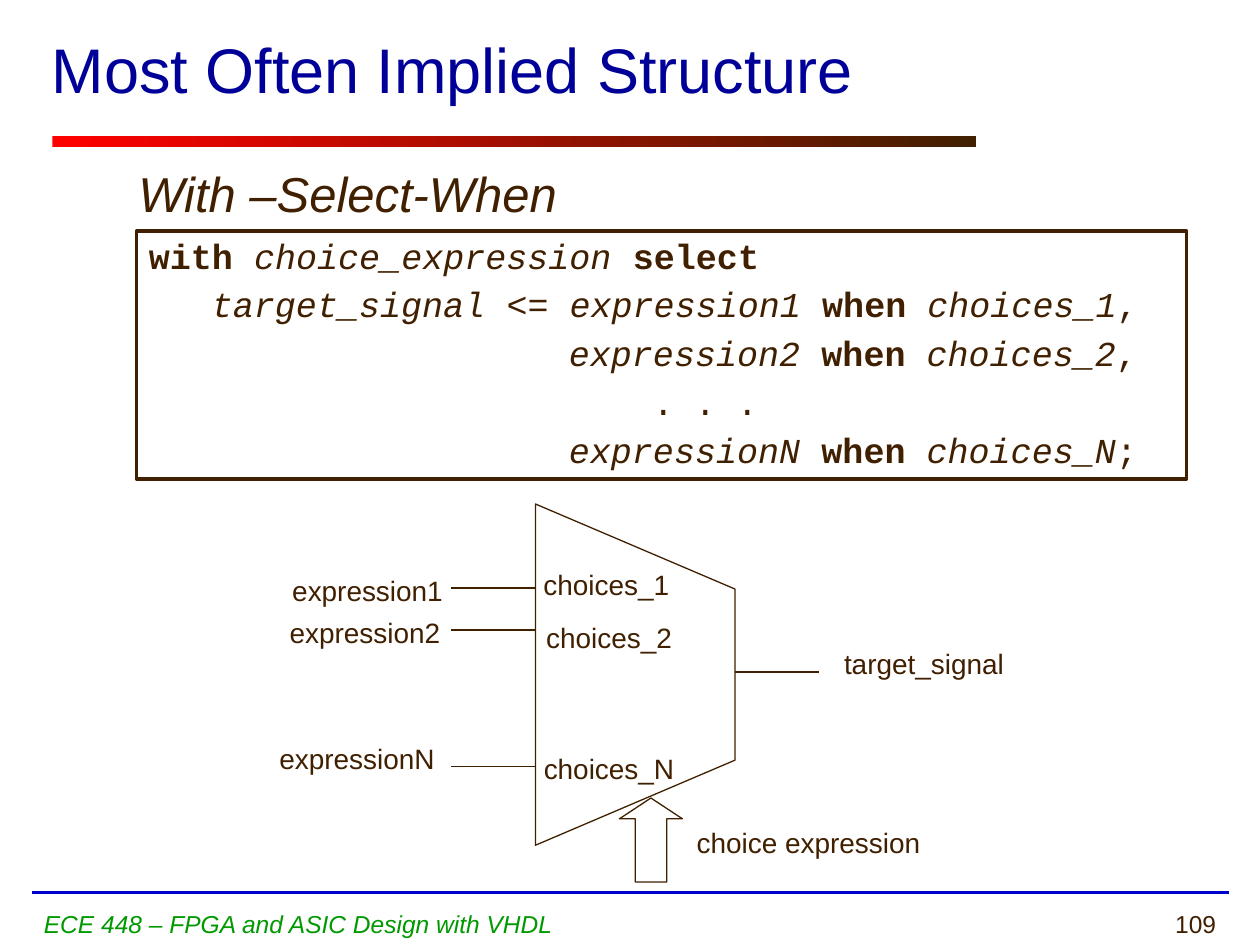
from lxml.etree import SubElement
from pptx import Presentation
from pptx.dml.color import RGBColor
from pptx.enum.shapes import MSO_CONNECTOR, MSO_SHAPE
from pptx.enum.text import MSO_ANCHOR, PP_ALIGN
from pptx.oxml.ns import qn
from pptx.util import Inches, Pt

BROWN = RGBColor(0x40, 0x20, 0x00)
NAVY = RGBColor(0x00, 0x00, 0x99)
BLUE = RGBColor(0x00, 0x00, 0xCC)
GREEN = RGBColor(0x00, 0x99, 0x00)
RED = RGBColor(0xFF, 0x00, 0x00)

CHARACTER = 1 / 6  # width in inches of a 20 pt Courier New character

# Each code line: indent in characters, then (text, style) runs
CODE = [
    (0, [("with ", "bold"), ("choice_expression ", "italic"), ("select", "bold")]),
    (3, [("target_signal", "italic"), (" <= ", ""), ("expression1 ", "italic"),
         ("when ", "bold"), ("choices_1", "italic"), (",", "")]),
    (20, [("expression2 ", "italic"), ("when ", "bold"), ("choices_2", "italic"), (",", "")]),
    (24, [(". . .", "")]),
    (20, [("expressionN ", "italic"), ("when ", "bold"), ("choices_N", "italic"), (";", "")]),
]

# Multiplexer labels: text, left, top, width in grid units
LABELS = [
    ("choices_1", 38.25, 53.5, 27), ("choices_2", 38.5, 58.5, 27),
    ("choices_N", 35, 71, 34), ("expression1", 13, 54, 32),
    ("expression2", 12.75, 58, 32), ("expressionN", 12, 70, 32),
    ("target_signal", 58, 61, 48), ("choice expression", 47, 78, 48),
]

# Multiplexer wires: start column, end column, row
WIRES = [(51, 43, 56), (51, 43, 60), (51, 43, 73), (78, 70, 64)]


def grid(units):
    """Length on a grid of twelve units to the inch."""
    return Inches(units / 12)


def box(left, top, width, height):
    return [grid(units) for units in (left, top, width, height)]


def set_indent(paragraph, left, first=0):
    properties = paragraph._p.get_or_add_pPr()
    properties.set("marL", str(Inches(left)))
    properties.set("indent", str(Inches(first)))


def add_run(paragraph, text, size, color=BROWN, font="Arial", bold=False, italic=False):
    run = paragraph.add_run()
    run.text = text
    run.font.name = font
    run.font.size = Pt(size)
    run.font.color.rgb = color
    run.font.bold = bold
    run.font.italic = italic


def add_text(slide, text, area, size, align=PP_ALIGN.LEFT, anchor=MSO_ANCHOR.TOP,
             indent=None, wrap=True, **font):
    frame = slide.shapes.add_textbox(*area).text_frame
    frame.word_wrap = wrap
    frame.vertical_anchor = anchor
    paragraph = frame.paragraphs[0]
    paragraph.alignment = align
    if indent:
        set_indent(paragraph, *indent)
    add_run(paragraph, text, size, **font)


def outline(shape, width):
    shape.shadow.inherit = False
    shape.fill.background()
    shape.line.color.rgb = BROWN
    shape.line.width = Pt(width)


def add_line(slide, start, end, color=BROWN, width=0.75):
    points = [grid(units) for units in (*start, *end)]
    connector = slide.shapes.add_connector(MSO_CONNECTOR.STRAIGHT, *points)
    connector.line.color.rgb = color
    connector.line.width = Pt(width)
    SubElement(connector._element.spPr, qn("a:effectLst"))


def add_gradient_bar(slide, area, colors):
    bar = slide.shapes.add_shape(MSO_SHAPE.RECTANGLE, *area)
    bar.shadow.inherit = False
    bar.line.fill.background()
    bar.fill.gradient()
    bar.fill.gradient_angle = 0
    for position, (stop, color) in enumerate(zip(bar.fill.gradient_stops, colors)):
        stop.position = position
        stop.color.rgb = color


def add_code(slide, area):
    panel = slide.shapes.add_shape(MSO_SHAPE.RECTANGLE, *area)
    outline(panel, 2)
    frame = panel.text_frame
    frame.word_wrap = True
    frame.vertical_anchor = MSO_ANCHOR.TOP
    for number, (indent, runs) in enumerate(CODE):
        paragraph = frame.add_paragraph() if number else frame.paragraphs[0]
        paragraph.alignment = PP_ALIGN.LEFT
        paragraph.line_spacing = 0.95
        paragraph.space_before = Pt(5 if number else 0)
        set_indent(paragraph, indent * CHARACTER)
        for text, style in runs:
            add_run(paragraph, text, 20, font="Courier New",
                    bold=style == "bold", italic=style == "italic")


def add_multiplexer(slide):
    # Body, wires and select arrow
    builder = slide.shapes.build_freeform(grid(51), grid(80.5))
    corners = [(70, 72.4), (70, 56.1), (51, 48)]
    builder.add_line_segments([(grid(x), grid(y)) for x, y in corners], close=True)
    outline(builder.convert_to_shape(), 0.75)
    for start, end, row in WIRES:
        add_line(slide, (start, row), (end, row))
    arrow = slide.shapes.add_shape(MSO_SHAPE.UP_ARROW, *box(59, 76, 6, 8))
    arrow.adjustments[0] = 0.5
    arrow.adjustments[1] = 0.33
    outline(arrow, 0.75)

    # Labels
    for text, left, top, width in LABELS:
        add_text(slide, text, box(left, top, width, 4.4), 16,
                 align=PP_ALIGN.CENTER, indent=(1.25, -0.25))


def main():
    presentation = Presentation()
    presentation.slide_width = Inches(10)
    presentation.slide_height = Inches(7.5)
    slide = presentation.slides.add_slide(presentation.slide_layouts[6])

    # Frame: footer rule, title bar, page number and course
    add_line(slide, (3, 85), (117, 85), BLUE, 2.25)
    add_gradient_bar(slide, box(5, 13, 88, 1), (RED, BROWN))
    add_text(slide, "109", box(91, 86, 26, 4), 14, align=PP_ALIGN.RIGHT)
    add_text(slide, "ECE 448 – FPGA and ASIC Design with VHDL", box(3, 86, 88, 4), 14,
             color=GREEN, italic=True)

    # Title and code
    add_text(slide, "Most Often Implied Structure", box(3.75, 1, 110, 11), 36,
             anchor=MSO_ANCHOR.MIDDLE, color=NAVY)
    add_code(slide, box(13, 22, 100, 23.6))
    add_text(slide, "With –Select-When", box(12, 15, 42.4, 6.8), 28,
             indent=(0.25, -0.25), wrap=False, italic=True)

    # Diagram
    add_multiplexer(slide)
    presentation.save("out.pptx")


if __name__ == "__main__":
    main()
